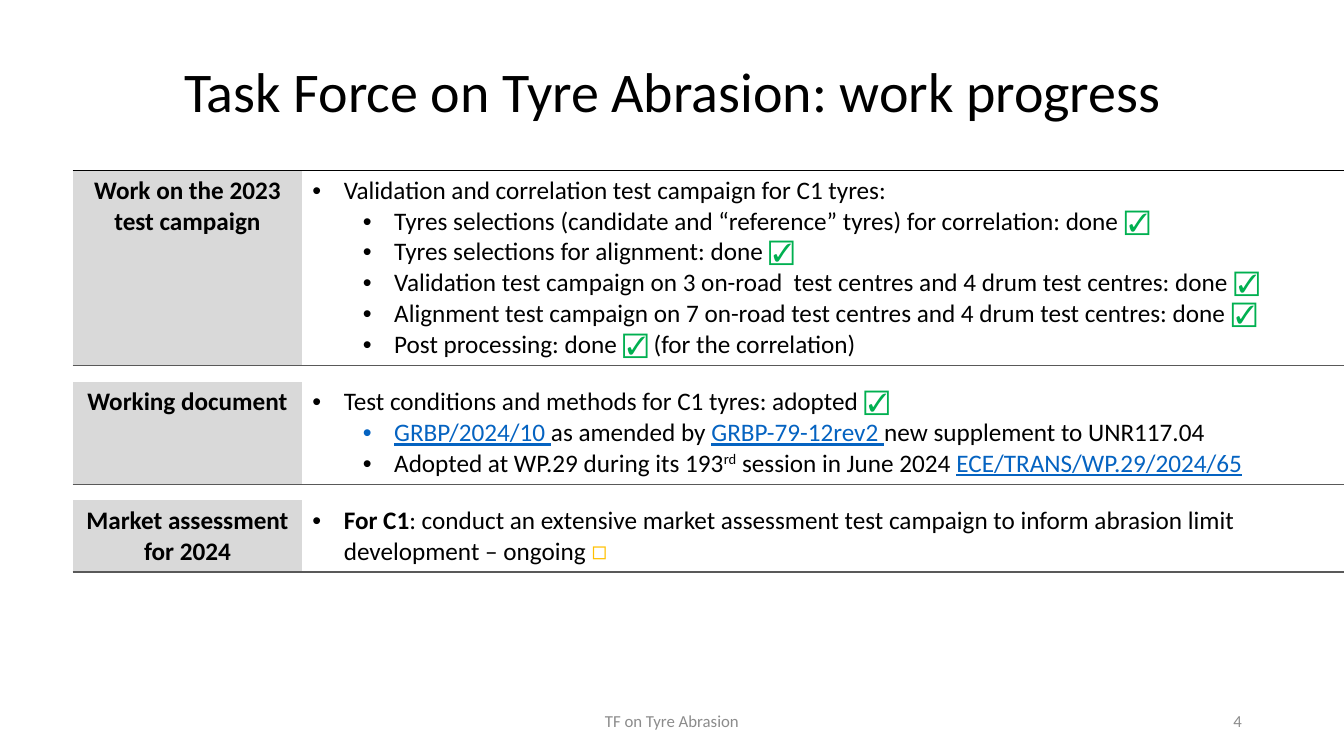
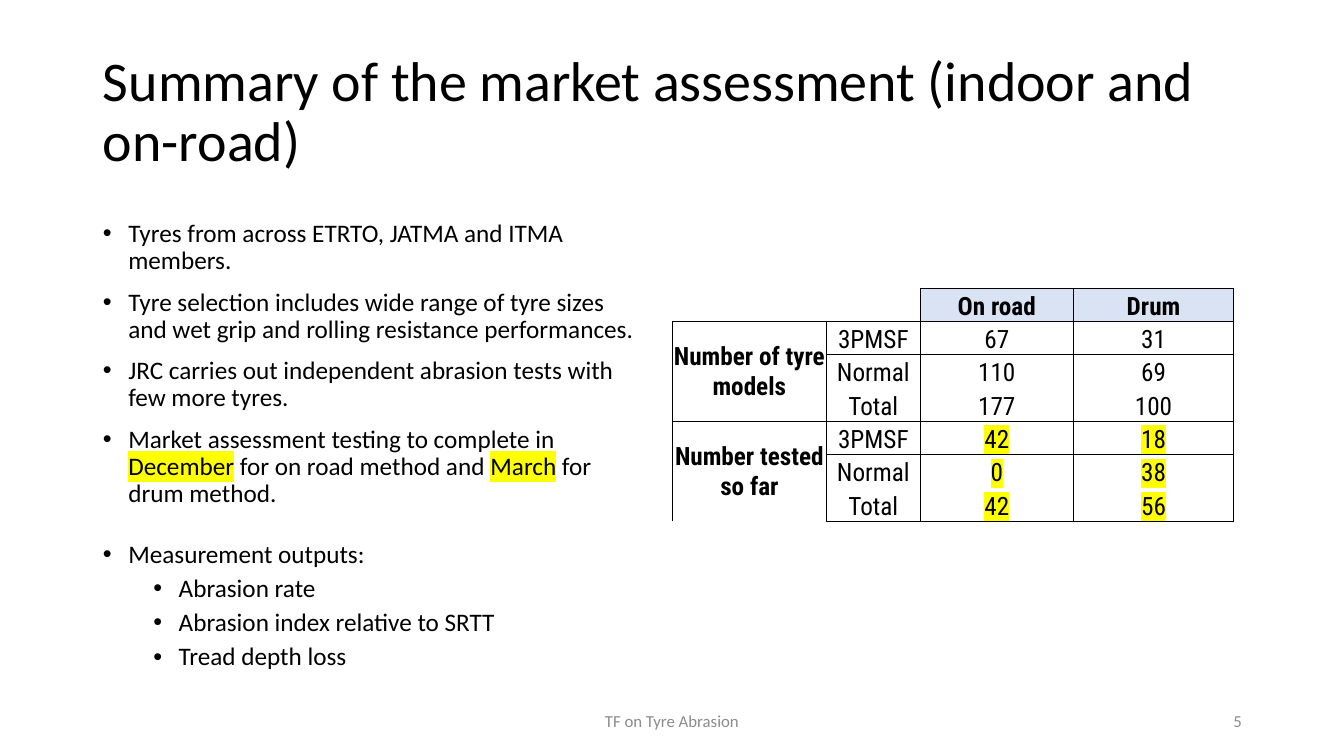
"""Build two slides on the progress of the tyre abrasion task force."""
from itertools import product

from lxml import etree
from pptx import Presentation
from pptx import util as u
from pptx.dml.color import RGBColor
from pptx.enum import text
from pptx.oxml.ns import qn

COLORS = {
    "text": "000000", "footer": "8C8C8C", "rule": "595959", "label": "D9D9D9",
    "header": "DAE3F3", "done": "00B050", "ongoing": "FFC000",
    "reference": "0563C1", "mark": "FFFF00",
}
BODY_FONT, TABLE_FONT = "Calibri", "Roboto Condensed"
NO_TABLE_STYLE = "{2D5ABB26-0587-4C30-8999-92F81FD0307C}"
LEFT, CENTER, RIGHT = text.PP_ALIGN.LEFT, text.PP_ALIGN.CENTER, text.PP_ALIGN.RIGHT
TOP, MIDDLE, BOTTOM = text.MSO_ANCHOR.TOP, text.MSO_ANCHOR.MIDDLE, text.MSO_ANCHOR.BOTTOM

RUN_STYLES = {
    "done": {"color": "done"},
    "ongoing": {"color": "ongoing"},
    "reference": {"color": "reference", "underline": True},
    "mark": {"highlight": "mark"},
    "bold": {"bold": True},
    "superscript": {"superscript": True},
}
DONE = ("☑", "done")

PROGRESS_TITLE = "Task Force on Tyre Abrasion: work progress"
PROGRESS = [
    ("Work on the 2023 test campaign", 4.92, [
        (0, ["Validation and correlation test campaign for C1 tyres:"]),
        (1, ["Tyres selections (candidate and “reference” tyres) for correlation: done ", DONE]),
        (1, ["Tyres selections for alignment: done ", DONE]),
        (1, ["Validation test campaign on 3 on-road  test centres and 4 drum test centres: done ",
             DONE]),
        (1, ["Alignment test campaign on 7 on-road test centres and 4 drum test centres: done ",
             DONE]),
        (1, ["Post processing: done ", DONE, " (for the correlation)"]),
    ]),
    ("Working document", 2.58, [
        (0, ["Test conditions and methods for C1 tyres: adopted ", DONE]),
        (1, [("GRBP/2024/10 ", "reference"), "as amended by ",
             ("GRBP-79-12rev2 ", "reference"), "new supplement to UNR117.04"]),
        (1, ["Adopted at WP.29 during its 193", ("rd", "superscript"),
             " session in June 2024 ", ("ECE/TRANS/WP.29/2024/65", "reference")]),
    ]),
    ("Market assessment for 2024", 1.8, [
        (0, [("For C1", "bold"),
             ": conduct an extensive market assessment test campaign to inform abrasion limit "
             "development – ongoing ", ("◻", "ongoing")]),
    ]),
]
PROGRESS_COLUMNS, PROGRESS_GAP = [5.79, 26.24], 0.41

SUMMARY_TITLE = "Summary of the market assessment (indoor and on-road)"
SUMMARY = [
    (0, ["Tyres from across ETRTO, JATMA and ITMA members."]),
    (0, ["Tyre selection includes wide range of tyre sizes and wet grip and rolling "
         "resistance performances."]),
    (0, ["JRC carries out independent abrasion tests with few more tyres."]),
    (0, ["Market assessment testing to complete in ", ("December", "mark"),
         " for on road method and ", ("March", "mark"), " for drum method."]),
    (0, ["Measurement outputs:"]),
    (1, ["Abrasion rate"]),
    (1, ["Abrasion index relative to SRTT"]),
    (1, ["Tread depth loss"]),
]
OUTPUTS_INDEX = 4

METHODS = ["On road", "Drum"]
COUNTS = [
    ("Number of tyre models", None,
     [("3PMSF", 67, 31), ("Normal", 110, 69), ("Total", 177, 100)]),
    ("Number tested so far", "mark",
     [("3PMSF", 42, 18), ("Normal", 0, 38), ("Total", 42, 56)]),
]
COUNT_COLUMNS, COUNT_ROW = [3.89, 2.36, 3.86, 4.04], 0.84


def rgb(name):
    """Return the named colour."""
    return RGBColor.from_string(COLORS[name])


def add_solid_fill(parent, name):
    """Append a solid fill element to a line or highlight parent."""
    fill = etree.SubElement(parent, qn("a:solidFill"))
    etree.SubElement(fill, qn("a:srgbClr"), val=COLORS[name])


def add_text(paragraph, content, size=18, font=BODY_FONT, color="text", bold=False,
             underline=False, highlight=None, superscript=False, align=None):
    """Append one formatted run to a paragraph."""
    if align is not None:
        paragraph.alignment = align
    run = paragraph.add_run()
    run.text = content
    run.font.size = u.Pt(size)
    run.font.name = font
    run.font.bold = bold
    run.font.underline = underline
    run.font.color.rgb = rgb(color)
    properties = run.font._element
    if superscript:
        properties.set("baseline", "30000")
    if highlight:
        element = etree.Element(qn("a:highlight"))
        etree.SubElement(element, qn("a:srgbClr"), val=COLORS[highlight])
        properties.find(qn("a:solidFill")).addnext(element)


def add_bullets(frame, items, hanging, line_spacing=1.0, spaces=(0, 0)):
    """Write a two-level bulleted list and return its paragraphs."""
    paragraphs = []
    for index, (level, runs) in enumerate(items):
        paragraph = frame.add_paragraph() if index else frame.paragraphs[0]
        paragraph.level = level
        paragraph.line_spacing = line_spacing
        paragraph.space_before = u.Pt(spaces[level])
        properties = paragraph._p.get_or_add_pPr()
        properties.set("marL", str(u.Cm(hanging + 1.27 * level)))
        properties.set("indent", str(-u.Cm(hanging)))
        etree.SubElement(properties, qn("a:buFont"), typeface="Arial")
        etree.SubElement(properties, qn("a:buChar"), char="•")
        for run in runs:
            content, style = (run, None) if isinstance(run, str) else run
            add_text(paragraph, content, **RUN_STYLES.get(style, {}))
        paragraphs.append(paragraph)
    return paragraphs


def place(shape, left, top, width, height):
    """Move and size a shape, in centimetres."""
    shape.left, shape.top = u.Cm(left), u.Cm(top)
    shape.width, shape.height = u.Cm(width), u.Cm(height)


def set_title(slide, content, top, align):
    """Write the slide title in the shared style."""
    title = slide.shapes.title
    place(title, 2.34, top, 29.21, 3.68)
    frame = title.text_frame
    frame.auto_size = text.MSO_AUTO_SIZE.NONE
    frame.vertical_anchor = MIDDLE
    frame.paragraphs[0].line_spacing = 0.9
    add_text(frame.paragraphs[0], content, size=40, align=align)


def add_footer(slide, number):
    """Add the footer and the slide number."""
    for content, left, width, align in [("TF on Tyre Abrasion", 11.22, 11.43, CENTER),
                                        (str(number), 23.93, 7.62, RIGHT)]:
        box = slide.shapes.add_textbox(u.Cm(left), u.Cm(17.65), u.Cm(width), u.Cm(1.02))
        box.text_frame.word_wrap = True
        box.text_frame.vertical_anchor = MIDDLE
        add_text(box.text_frame.paragraphs[0], content, size=12, color="footer", align=align)


def add_plain_table(slide, left, top, columns, rows):
    """Add an unstyled table with the given column widths and row heights."""
    frame = slide.shapes.add_table(len(rows), len(columns), u.Cm(left), u.Cm(top),
                                   u.Cm(sum(columns)), u.Cm(sum(rows)))
    table = frame.table
    table.first_row = table.horz_banding = False
    table._tbl.tblPr.find(qn("a:tableStyleId")).text = NO_TABLE_STYLE
    for column, width in zip(table.columns, columns):
        column.width = u.Cm(width)
    for row, height in zip(table.rows, rows):
        row.height = u.Cm(height)
    for cell in table.iter_cells():
        cell.fill.background()
    return table


def set_margins(cell, size):
    """Give a cell equal margins on all sides, in centimetres."""
    cell.margin_left = cell.margin_right = u.Cm(size)
    cell.margin_top = cell.margin_bottom = u.Cm(size)


def shrink_empty_cells(table):
    """Keep cells without text from stretching their rows."""
    for cell in table.iter_cells():
        if not cell.text_frame.text:
            set_margins(cell, 0)
            etree.SubElement(cell.text_frame.paragraphs[0]._p, qn("a:endParaRPr"), sz="400")


def set_fill(cell, name):
    """Fill a cell with the named colour."""
    cell.fill.solid()
    cell.fill.fore_color.rgb = rgb(name)


def set_borders(cell, **sides):
    """Draw one-point borders, given as side=colour in the order L, R, T, B."""
    properties = cell._tc.get_or_add_tcPr()
    for index, (side, name) in enumerate(sides.items()):
        line = etree.Element(qn(f"a:ln{side}"), w=str(u.Pt(1)))
        add_solid_fill(line, name)
        properties.insert(index, line)


def outline(table, first_row, last_row, first_column, last_column):
    """Draw a border around a block of cells."""
    for row, column in product(range(first_row, last_row + 1),
                               range(first_column, last_column + 1)):
        edges = {"L": column == first_column, "R": column == last_column,
                 "T": row == first_row, "B": row == last_row}
        set_borders(table.cell(row, column),
                    **{side: "text" for side, drawn in edges.items() if drawn})


def build_progress(presentation):
    """Build the slide with the work progress table."""
    slide = presentation.slides.add_slide(presentation.slide_layouts[5])
    set_title(slide, PROGRESS_TITLE, 0.53, CENTER)
    heights = [size for _, height, _ in PROGRESS for size in (height, PROGRESS_GAP)][:-1]
    table = add_plain_table(slide, 1.83, 4.29, PROGRESS_COLUMNS, heights)
    for index, (label, _, items) in enumerate(PROGRESS):
        label_cell, items_cell = table.rows[2 * index].cells
        add_text(label_cell.text_frame.paragraphs[0], label, bold=True, align=CENTER)
        add_bullets(items_cell.text_frame, items, 0.79)
        top = {} if index else {"T": "text"}
        for cell in (label_cell, items_cell):
            cell.vertical_anchor = TOP
            set_borders(cell, **top, B="rule")
        set_fill(label_cell, "label")
    shrink_empty_cells(table)
    add_footer(slide, 4)


def add_count_table(slide):
    """Add the table of tyre counts by method."""
    row_count = 1 + sum(len(rows) for _, _, rows in COUNTS)
    table = add_plain_table(slide, 16.94, 7.26, COUNT_COLUMNS, [COUNT_ROW] * row_count)

    def write(row, column, content, anchor=BOTTOM, **style):
        cell = table.cell(row, column)
        set_margins(cell, 0.03)
        cell.margin_bottom = 0
        cell.vertical_anchor = anchor
        add_text(cell.text_frame.paragraphs[0], str(content), font=TABLE_FONT,
                 align=CENTER, **style)
        return cell

    for column, method in enumerate(METHODS, 2):
        set_fill(write(0, column, method, bold=True), "header")
    outline(table, 0, 0, 2, 3)
    first = 1
    for label, highlight, rows in COUNTS:
        last = first + len(rows) - 1
        table.cell(first, 0).merge(table.cell(last, 0))
        write(first, 0, label, anchor=MIDDLE, bold=True)
        for row, (category, *values) in enumerate(rows, first):
            write(row, 1, category)
            for column, value in enumerate(values, 2):
                write(row, column, value, highlight=highlight)
        for columns in [(0, 0), (1, 1), (2, 3)]:
            outline(table, first, last, *columns)
        first = last + 1
    shrink_empty_cells(table)


def build_summary(presentation):
    """Build the slide with the market assessment summary."""
    slide = presentation.slides.add_slide(presentation.slide_layouts[1])
    set_title(slide, SUMMARY_TITLE, 1.02, LEFT)
    body = slide.placeholders[1]
    place(body, 2.34, 5.44, 14.15, 10.77)
    body.text_frame.auto_size = text.MSO_AUTO_SIZE.NONE
    paragraphs = add_bullets(body.text_frame, SUMMARY, 0.64, line_spacing=0.9, spaces=(10, 5))
    paragraphs[OUTPUTS_INDEX].space_before = u.Pt(24)
    add_count_table(slide)
    add_footer(slide, 5)


def main():
    """Build and save the presentation."""
    presentation = Presentation()
    presentation.slide_width, presentation.slide_height = u.Cm(33.87), u.Cm(19.05)
    build_progress(presentation)
    build_summary(presentation)
    presentation.save("out.pptx")


if __name__ == "__main__":
    main()
